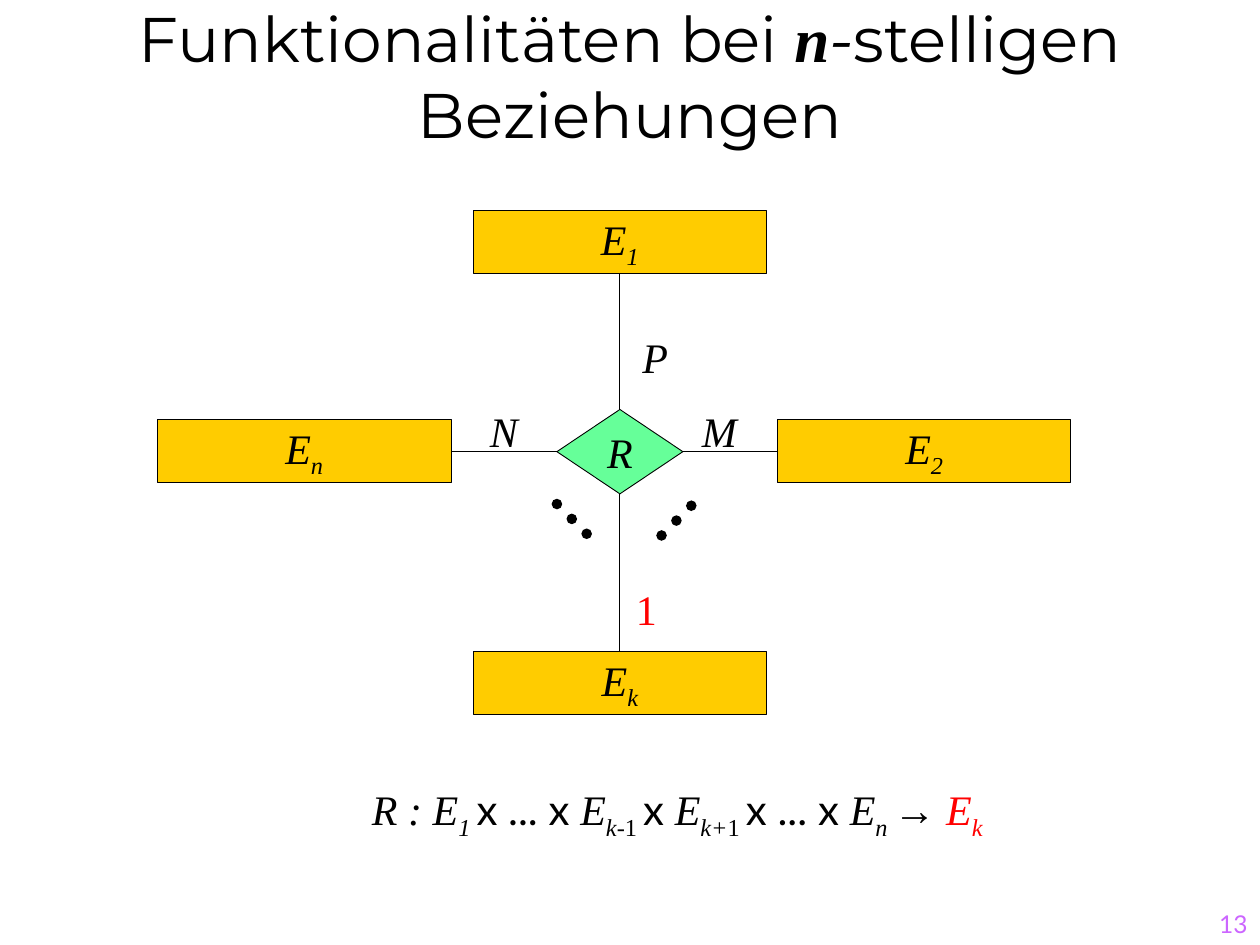
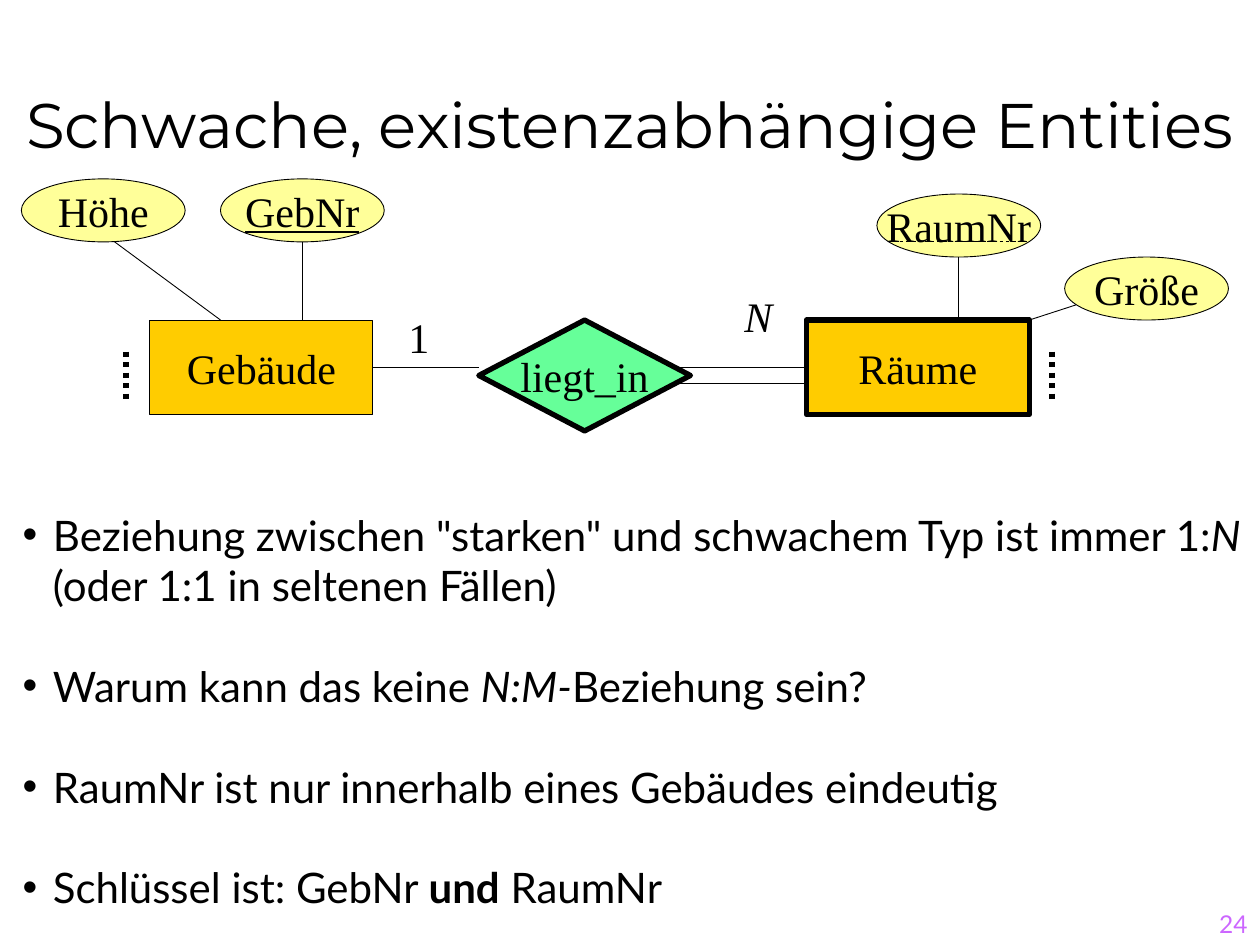
import pptx
import pptx.util
import pptx.dml.color
import pptx.enum.dml
import pptx.enum.shapes
import pptx.enum.text
import pptx.oxml.ns
import lxml.etree

Inches, Pt = pptx.util.Inches, pptx.util.Pt
SHAPE = pptx.enum.shapes.MSO_SHAPE
ALIGN = pptx.enum.text.PP_ALIGN
ANCHOR = pptx.enum.text.MSO_ANCHOR
DASH = pptx.enum.dml.MSO_LINE

BLACK, RED, PURPLE = "000000", "FF0000", "CC66FF"
ENTITY, RELATION, ATTRIBUTE = "FFCC00", "66FF99", "FFFF99"
THIN, THICK = 0.5, 3

SERIF = {"name": "Times New Roman", "size": Pt(24)}
SANS = {"name": "Lato", "size": Pt(24)}
TITLE = {"name": "Montserrat", "size": Pt(36)}
PAGE = {"name": "Lato", "size": Pt(14), "color": PURPLE}
VAR = {**SERIF, "italic": True}
SUB = {**VAR, "baseline": -25000}
SUB_UPRIGHT = {**SUB, "italic": False}


def rgb(code):
    """Turn a hex string into a colour."""
    return pptx.dml.color.RGBColor.from_string(code)


def add_runs(p, runs):
    """Append (text, format) pairs to a paragraph."""
    for text, fmt in runs:
        r = p.add_run()
        r.text = text
        fmt = {"color": BLACK, **fmt}
        r.font.color.rgb = rgb(fmt.pop("color"))
        if "baseline" in fmt:
            r.font._element.set("baseline", str(fmt.pop("baseline")))
        for key, value in fmt.items():
            setattr(r.font, key, value)


def set_frame(tf, **values):
    """Set text frame attributes from a dict."""
    values = {"word_wrap": True, "auto_size": pptx.enum.text.MSO_AUTO_SIZE.NONE, **values}
    for key, value in values.items():
        setattr(tf, key, value)


def lengths(box, x, y, w, h):
    """Convert an area relative to a box into slide lengths."""
    return [Inches(v) for v in (box[0] + x, box[1] + y, w, h)]


def add_label(s, box, area, runs, align=ALIGN.CENTER, anchor=ANCHOR.TOP):
    """Add a one-paragraph text box inside a region."""
    tf = s.shapes.add_textbox(*lengths(box, *area)).text_frame
    set_frame(tf, vertical_anchor=anchor)
    tf.paragraphs[0].alignment = align
    add_runs(tf.paragraphs[0], runs)


def add_node(s, box, kind, area, fill, runs, width=THIN):
    """Add a filled and outlined diagram node with centred text."""
    sp = s.shapes.add_shape(kind, *lengths(box, *area))
    sp.shadow.inherit = False
    sp.fill.solid()
    sp.fill.fore_color.rgb = rgb(fill)
    sp.line.color.rgb = rgb(BLACK)
    sp.line.width = Pt(width)
    set_frame(sp.text_frame, word_wrap=False, vertical_anchor=ANCHOR.MIDDLE)
    p = sp.text_frame.paragraphs[0]
    p.alignment = ALIGN.CENTER
    add_runs(p, runs)


def add_line(s, box, start, end, width=THIN, dash=None, cap=None):
    """Add a black straight line inside a region."""
    ends = [Inches(box[i] + point[i]) for point in (start, end) for i in (0, 1)]
    line = s.shapes.add_connector(pptx.enum.shapes.MSO_CONNECTOR.STRAIGHT, *ends)
    line.line.color.rgb = rgb(BLACK)
    line.line.width = Pt(width)
    if dash:
        line.line.dash_style = dash
    sp_pr = line._element.spPr
    if cap:
        sp_pr.find(pptx.oxml.ns.qn("a:ln")).set("cap", cap)
    lxml.etree.SubElement(sp_pr, pptx.oxml.ns.qn("a:effectLst"))


def add_slide(prs, layout, title_box, title, number):
    """Add a slide with its title and page number."""
    s = prs.slides.add_slide(prs.slide_layouts[layout])
    sp = s.shapes.title
    sp.left, sp.top, sp.width, sp.height = lengths((0, 0), *title_box)
    set_frame(sp.text_frame, vertical_anchor=ANCHOR.BOTTOM)
    p = sp.text_frame.paragraphs[0]
    p.alignment = ALIGN.CENTER
    add_runs(p, title)
    add_label(s, (7.92, 7), (0, 0, 2.08, 0.5), [(number, PAGE)], ALIGN.RIGHT, ANCHOR.BOTTOM)
    return s


def draw_star(s, box):
    """Draw the n-ary relationship with its entities around it."""
    cx, cy, w, h = 3.67, 1.91, 2.33, 0.5
    entities = {"1": (cx - w / 2, 0), "n": (0, cy - h / 2),
                "2": (box[2] - w, cy - h / 2), "k": (cx - w / 2, box[3] - h)}
    for index, (x, y) in entities.items():
        add_node(s, box, SHAPE.RECTANGLE, (x, y, w, h), ENTITY, [("E", VAR), (index, SUB)])
    add_node(s, box, SHAPE.DIAMOND, (cx - 0.5, cy - 0.33, 1, 0.67), RELATION, [("R", VAR)])
    for start, end in (((cx, h), (cx, cy - 0.33)), ((cx - 0.5, cy), (w, cy)),
                       ((cx + 0.5, cy), (box[2] - w, cy)),
                       ((cx, cy + 0.34), (cx, box[3] - h))):
        add_line(s, box, start, end)
    for start, end in (((4, 2.58), (4.25, 2.33)), ((3.17, 2.33), (3.42, 2.58))):
        add_line(s, box, start, end, 6, DASH.ROUND_DOT, "rnd")
    add_label(s, box, (3.75, 0.91, 0.67, 0.5), [("P", VAR)], ALIGN.LEFT)
    for text, x, y, width, fmt in (("M", 4.17, 1.5, 0.58, VAR), ("N", 2.5, 1.5, 0.5, VAR),
                                   ("1", 3.67, 2.91, 0.42, {**SERIF, "color": RED})):
        add_label(s, box, (x, y, width, 0.5), [(text, fmt)])


def draw_formula(s, box):
    """Write the partial function that the relationship defines."""
    add_label(s, box, (0, 0, box[2], box[3]), [
        ("R : E", VAR), ("1 ", SUB), ("x ... x ", SANS),
        ("E", VAR), ("k-", SUB), ("1 ", SUB_UPRIGHT), ("x ", SANS),
        ("E", VAR), ("k+", SUB), ("1 ", SUB_UPRIGHT), ("x ... x ", SANS),
        ("E", VAR), ("n ", SUB), ("→ ", VAR),
        ("E", {**VAR, "color": RED}), ("k", {**SUB, "color": RED})])


def draw_weak_entity(s, box):
    """Draw the building and room entities with their attributes."""
    for text, x, width in (("Gebäude", 1.02, THIN), ("Räume", 6.23, THICK)):
        add_node(s, box, SHAPE.RECTANGLE, (x, 1.12, 1.77, 0.75), ENTITY, [(text, SERIF)], width)
    add_node(s, box, SHAPE.DIAMOND, (3.63, 1.12, 1.68, 0.88), RELATION,
             [("liegt_in", SERIF)], THICK)
    for text, x, y, key in (("Höhe", 0, 0, False), ("GebNr", 1.58, 0, True),
                            ("Größe", 8.28, 0.62, False), ("RaumNr", 6.79, 0.12, False)):
        add_node(s, box, SHAPE.OVAL, (x, y, 1.3, 0.5), ATTRIBUTE,
                 [(text, {**SERIF, "underline": key})])
    for start, end in (((5.21, 1.5), (6.23, 1.5)), ((5.21, 1.62), (6.23, 1.62)),
                       ((3.63, 1.5), (2.79, 1.5)), ((2.23, 0.5), (2.23, 1.12)),
                       ((0.74, 0.5), (1.58, 1.12)), ((7.44, 0.62), (7.44, 1.12)),
                       ((8.37, 1), (8, 1.12))):
        add_line(s, box, start, end)
    add_line(s, box, (6.97, 0.5), (7.9, 0.5), THIN, DASH.DASH)
    for x in (0.83, 8.18):
        add_line(s, box, (x, 1.37), (x, 1.75), THICK, DASH.ROUND_DOT)
    add_label(s, box, (2.97, 1, 0.37, 0.5), [("1", SERIF)])
    add_label(s, box, (5.64, 0.84, 0.42, 0.5), [("N", VAR)])


def fill_bullets(s, box, items):
    """Fill the body placeholder with a spaced bullet list."""
    sp = s.placeholders[1]
    sp.left, sp.top, sp.width, sp.height = lengths((0, 0), *box)
    tf = sp.text_frame
    set_frame(tf, vertical_anchor=ANCHOR.TOP)
    for i, runs in enumerate(items):
        p = tf.add_paragraph() if i else tf.paragraphs[0]
        p.space_before = Pt(28.8 if i else 0)
        p_pr = p._p.get_or_add_pPr()
        p_pr.set("marL", str(Inches(0.24)))
        p_pr.set("indent", str(Inches(-0.24)))
        add_runs(p, runs)


def main():
    """Build both slides and save them."""
    prs = pptx.Presentation()
    prs.slide_width, prs.slide_height = Inches(10), Inches(7.5)

    s = add_slide(prs, 5, (0, 0.42, 10, 0.83), [
        ("Funktionalitäten bei ", TITLE), ("n", {**TITLE, **VAR, "size": Pt(36), "bold": True}),
        ("-", {**TITLE, "italic": True}), ("stelligen Beziehungen", TITLE)], "13")
    draw_star(s, (1.25, 1.67, 7.25, 4))
    draw_formula(s, (2, 6.17, 6.75, 0.5))

    s = add_slide(prs, 1, (0, 0.75, 10, 0.58),
                  [("Schwache, existenzabhängige Entities", TITLE)], "24")
    italic, bold = {**SANS, "italic": True}, {**SANS, "bold": True}
    fill_bullets(s, (0.08, 3.99, 9.92, 3.4), [
        [('Beziehung zwischen "starken" und schwachem Typ ist immer 1:', SANS),
         ("N", italic), (" (oder 1:1 in seltenen Fällen)", SANS)],
        [("Warum kann das keine ", SANS), ("N:M-", italic), ("Beziehung sein?", SANS)],
        [("RaumNr ist nur innerhalb eines Gebäudes eindeutig", SANS)],
        [("Schlüssel ist: GebNr ", SANS), ("und", bold), (" RaumNr", SANS)]])
    draw_weak_entity(s, (0.17, 1.42))

    prs.save("out.pptx")


if __name__ == "__main__":
    main()
